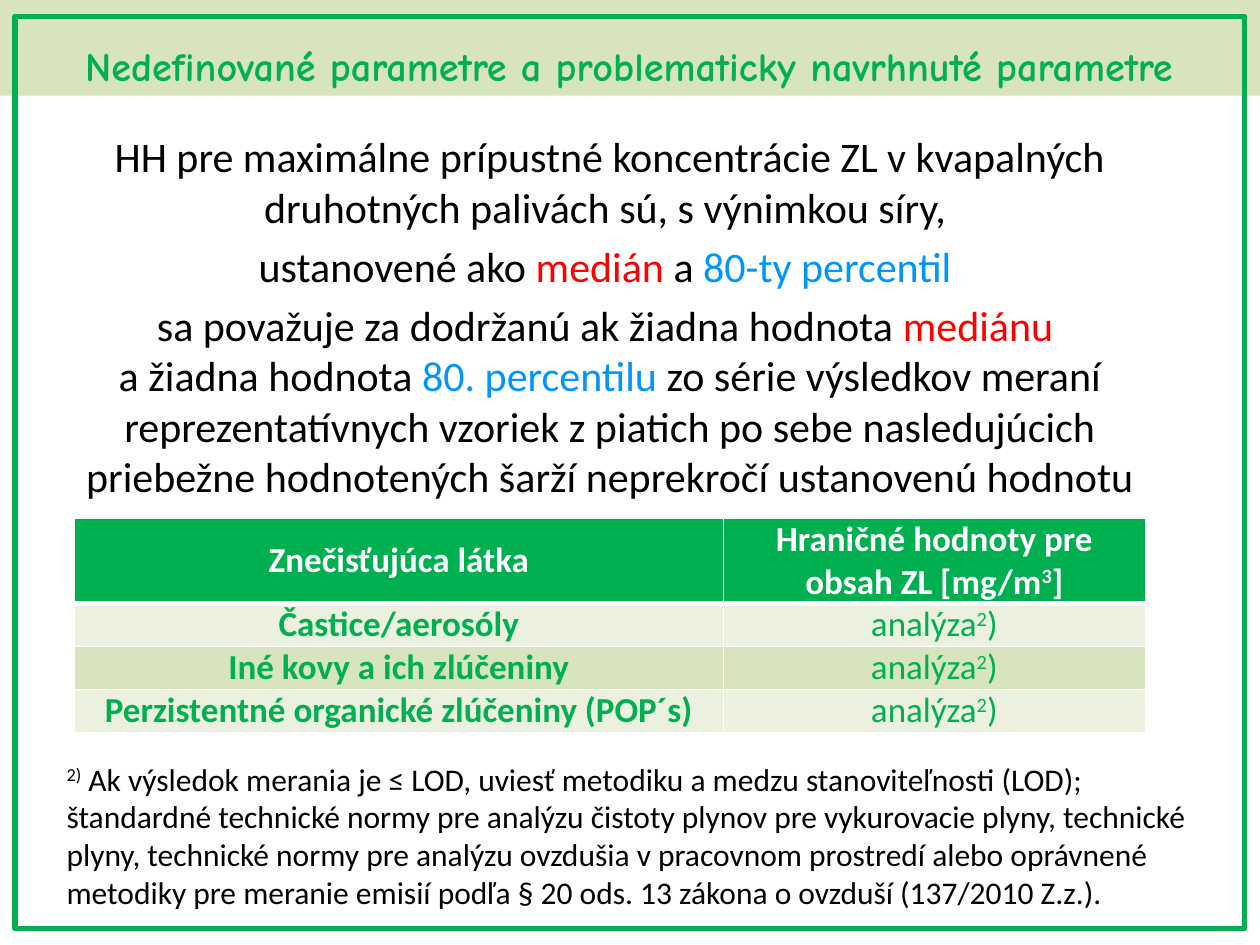
"""Build the slide on undefined and problematic parameters with its limit value table."""
from lxml import etree
from pptx import Presentation
from pptx.dml.color import RGBColor
from pptx.enum.shapes import MSO_SHAPE
from pptx.enum.text import MSO_ANCHOR, PP_ALIGN
from pptx.oxml.ns import qn
from pptx.util import Inches, Pt

GREEN = RGBColor(0x00, 0xB0, 0x50)
LIGHT_GREEN = RGBColor(0xD7, 0xE4, 0xBD)
PALE_GREEN = RGBColor(0xEB, 0xF1, 0xDE)
WHITE = RGBColor(0xFF, 0xFF, 0xFF)
BLACK = RGBColor(0x00, 0x00, 0x00)
RED = RGBColor(0xFF, 0x00, 0x00)
BLUE = RGBColor(0x00, 0x96, 0xFF)


def add_run(paragraph, text, size, color, bold=False, superscript=False, font="Calibri"):
    run = paragraph.add_run()
    run.text = text
    run.font.name = font
    run.font.size = Pt(size)
    run.font.bold = bold
    run.font.color.rgb = color
    if superscript:
        run._r.get_or_add_rPr().set("baseline", "30000")


def add_border(cell, side, width):
    line = etree.SubElement(cell._tc.get_or_add_tcPr(), qn(f"a:ln{side}"), w=str(Pt(width)))
    fill = etree.SubElement(line, qn("a:solidFill"))
    etree.SubElement(fill, qn("a:srgbClr"), val=str(WHITE))


presentation = Presentation()
presentation.slide_width = Inches(10)
presentation.slide_height = Inches(7.5)
slide = presentation.slides.add_slide(presentation.slide_layouts[6])

title_band = slide.shapes.add_shape(MSO_SHAPE.RECTANGLE, 0, 0, Inches(10), Inches(0.76))
title_band.shadow.inherit = False
title_band.fill.solid()
title_band.fill.fore_color.rgb = LIGHT_GREEN
title_band.line.fill.background()
title_band.text_frame.word_wrap = True
title_band.text_frame.vertical_anchor = MSO_ANCHOR.BOTTOM
title = title_band.text_frame.paragraphs[0]
title.alignment = PP_ALIGN.CENTER
title.space_before = Pt(6)
add_run(title, "Nedefinované parametre a problematicky navrhnuté parametre", 23, GREEN,
        bold=True, font="Comic Neue")

header = [
    [("Znečisťujúca látka", False)],
    [("Hraničné hodnoty pre obsah ZL [mg/m", False), ("3", True), ("]", False)],
]
analysis = [("analýza", False), ("2", True), (")", False)]
substances = ["Častice/aerosóly", "Iné kovy a ich zlúčeniny", "Perzistentné organické zlúčeniny (POP´s)"]
rows = [header] + [[[(substance, False)], analysis] for substance in substances]

table = slide.shapes.add_table(
    len(rows), 2, Inches(0.59), Inches(4.11), Inches(8.5), Inches(1.67)).table
table.columns[0].width = Inches(5.15)
table.columns[1].width = Inches(3.35)
for row_index, row in enumerate(rows):
    is_header = row_index == 0
    table.rows[row_index].height = Inches(0.67 if is_header else 0.33)
    for column_index, pieces in enumerate(row):
        cell = table.cell(row_index, column_index)
        cell.margin_left = cell.margin_right = Inches(0.07)
        cell.margin_top = cell.margin_bottom = 0
        cell.vertical_anchor = MSO_ANCHOR.MIDDLE if is_header else MSO_ANCHOR.TOP
        add_border(cell, "L", 1)
        add_border(cell, "R", 1)
        add_border(cell, "T", 3 if row_index == 1 else 1)
        add_border(cell, "B", 3 if is_header else 1)
        cell.fill.solid()
        cell.fill.fore_color.rgb = GREEN if is_header else (LIGHT_GREEN, PALE_GREEN)[row_index % 2]
        paragraph = cell.text_frame.paragraphs[0]
        paragraph.alignment = PP_ALIGN.CENTER
        for text, superscript in pieces:
            add_run(paragraph, text, 20, WHITE if is_header else GREEN,
                    bold=is_header or column_index == 0, superscript=superscript)

frame = slide.shapes.add_shape(
    MSO_SHAPE.RECTANGLE, Inches(0.12), Inches(0.13), Inches(9.76), Inches(7.24))
frame.shadow.inherit = False
frame.fill.background()
frame.line.color.rgb = GREEN
frame.line.width = Pt(3)

statements = [
    [("HH pre maximálne prípustné koncentrácie ZL v kvapalných druhotných palivách sú, "
      "s výnimkou síry, ", BLACK)],
    [("ustanovené ako ", BLACK), ("medián", RED), (" a ", BLACK), ("80-ty percentil ", BLUE)],
    [("sa považuje za dodržanú ak žiadna hodnota ", BLACK), ("mediánu ", RED), None,
     ("a žiadna hodnota ", BLACK), ("80. percentilu ", BLUE),
     ("zo série výsledkov meraní reprezentatívnych vzoriek z piatich po sebe nasledujúcich "
      "priebežne hodnotených šarží neprekročí ustanovenú hodnotu", BLACK)],
]
body = slide.shapes.add_textbox(Inches(0.43), Inches(0.99), Inches(8.82), Inches(2.93)).text_frame
body.word_wrap = True
for index, statement in enumerate(statements):
    paragraph = body.add_paragraph() if index else body.paragraphs[0]
    paragraph.alignment = PP_ALIGN.CENTER
    paragraph.space_before = Pt(5)
    for piece in statement:
        if piece is None:
            paragraph.add_line_break()
        else:
            add_run(paragraph, piece[0], 24, piece[1])

footnote = slide.shapes.add_textbox(
    Inches(0.43), Inches(5.98), Inches(9.45), Inches(1.31)).text_frame
footnote.word_wrap = True
add_run(footnote.paragraphs[0], "2)", 18, BLACK, superscript=True)
add_run(footnote.paragraphs[0],
        " Ak výsledok merania je ≤ LOD, uviesť metodiku a medzu stanoviteľnosti (LOD); "
        "štandardné technické normy pre analýzu čistoty plynov pre vykurovacie plyny, "
        "technické plyny, technické normy pre analýzu ovzdušia v pracovnom prostredí alebo "
        "oprávnené metodiky pre meranie emisií podľa § 20 ods. 13 zákona o ovzduší "
        "(137/2010 Z.z.).", 18, BLACK)

presentation.save("out.pptx")
